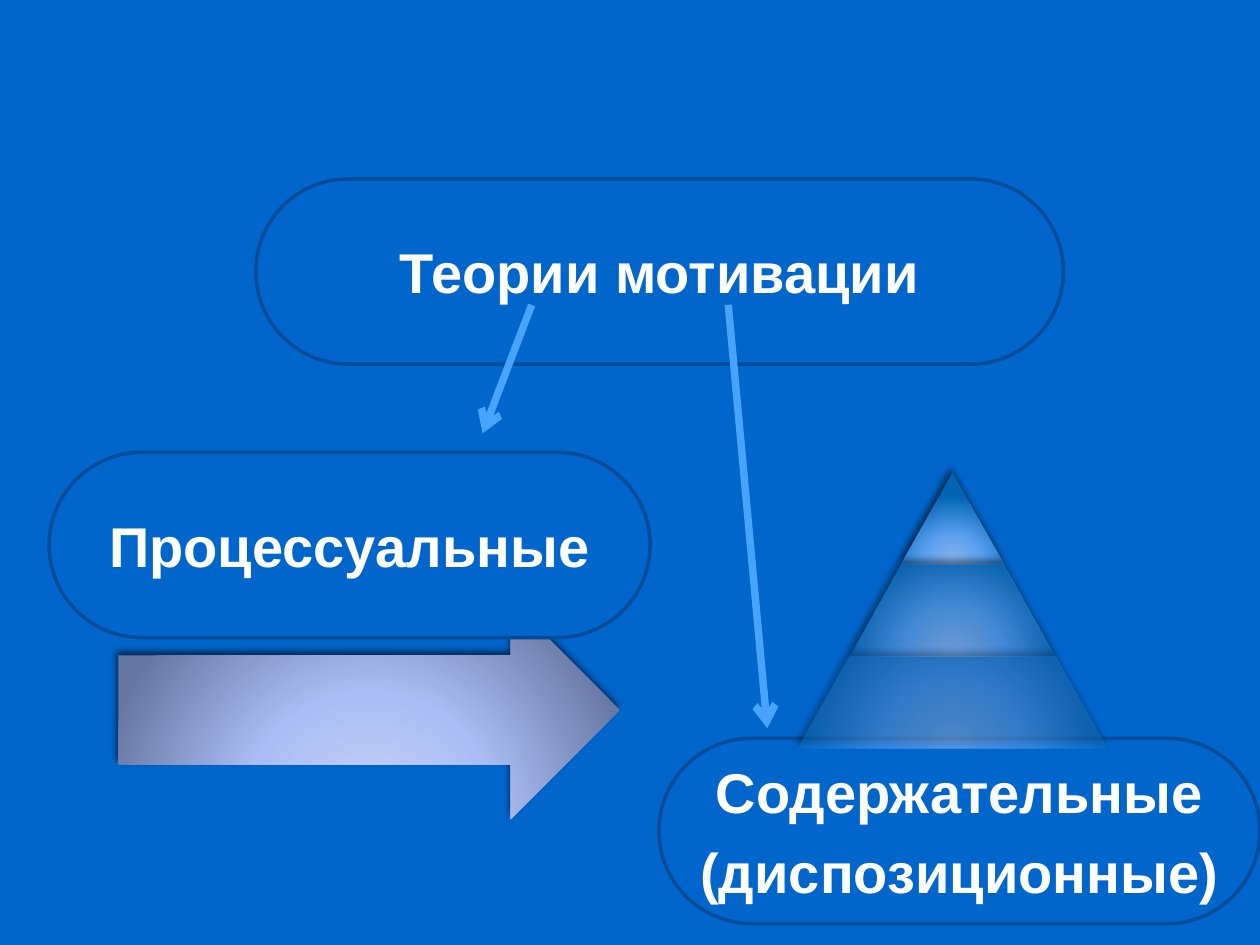
"""Build the slide on theories of motivation."""
from lxml import etree
from pptx import Presentation
from pptx.dml.color import RGBColor
from pptx.enum.shapes import MSO_CONNECTOR, MSO_SHAPE
from pptx.enum.text import MSO_ANCHOR, PP_ALIGN
from pptx.oxml import parse_xml
from pptx.oxml.ns import nsdecls, qn
from pptx.util import Inches, Pt

ROUND, ARROW, TRAP = MSO_SHAPE.ROUNDED_RECTANGLE, MSO_SHAPE.RIGHT_ARROW, MSO_SHAPE.TRAPEZOID
LINE = MSO_CONNECTOR.STRAIGHT
MIDDLE, CENTER = MSO_ANCHOR.MIDDLE, PP_ALIGN.CENTER

BLUE = RGBColor(0x00, 0x66, 0xCC)
NAVY = RGBColor(0x00, 0x4C, 0x99)
SKY = RGBColor(0x47, 0xA3, 0xFF)
WHITE = RGBColor(0xFF, 0xFF, 0xFF)
BLACK = RGBColor(0x00, 0x00, 0x00)
LILAC = [RGBColor(0xC9, 0xD3, 0xF7), RGBColor(0xAB, 0xBD, 0xF4), RGBColor(0x67, 0x76, 0xA3)]
AZURE = [RGBColor(0xA2, 0xC8, 0xFF), RGBColor(0x61, 0xAB, 0xFF), RGBColor(0x00, 0x6B, 0xBB)]
STOPS = [0, 46, 100]
FONT = {"name": "Arial", "size": Pt(32), "bold": True}
FRAME = {"word_wrap": True, "vertical_anchor": MIDDLE, "margin_left": 0,
         "margin_right": 0, "margin_top": 0, "margin_bottom": 0}


def add(kind, *place):
    shape = slide.shapes.add_shape(kind, *map(Inches, place))
    shape.shadow.inherit = False
    return shape


def shade(shape, tones, alpha):
    shape.line.fill.background()
    stops = "".join(
        f'<a:gs pos="{pos * 1000}"><a:srgbClr val="{tone}">'
        f'<a:alpha val="{alpha * 1000}"/></a:srgbClr></a:gs>'
        for pos, tone in zip(STOPS, tones))
    props = shape.element.spPr
    props.find(qn("a:prstGeom")).addnext(parse_xml(
        f'<a:gradFill {nsdecls("a")} rotWithShape="1"><a:gsLst>{stops}</a:gsLst>'
        '<a:path path="circle"><a:fillToRect l="50000" t="155000" r="50000" b="-55000"/>'
        '</a:path></a:gradFill>'))
    props.find(qn("a:effectLst")).append(parse_xml(
        f'<a:outerShdw {nsdecls("a")} blurRad="{Pt(4)}" dist="{Pt(3)}" dir="{245 * 60000}" '
        f'rotWithShape="0"><a:srgbClr val="{BLACK}"><a:alpha val="60000"/></a:srgbClr>'
        '</a:outerShdw>'))


deck = Presentation()
deck.slide_width, deck.slide_height = Inches(10), Inches(7.5)
slide = deck.slides.add_slide(deck.slide_layouts[6])
slide.background.fill.solid()
slide.background.fill.fore_color.rgb = BLUE

shade(add(ARROW, 0.94, 4.77, 3.98, 1.73), LILAC, 100)

for left, top, width, lines in [
    (2.03, 1.42, 6.41, ["Теории мотивации"]),
    (0.39, 3.59, 4.77, ["Процессуальные"]),
    (5.23, 5.86, 4.77, ["Содержательные", "(диспозиционные)"]),
]:
    box = add(ROUND, left, top, width, 1.47)
    box.adjustments[0] = 0.5
    box.fill.solid()
    box.fill.fore_color.rgb = BLUE
    box.line.color.rgb = NAVY
    box.line.width = Pt(2)
    frame = box.text_frame
    for key, value in FRAME.items():
        setattr(frame, key, value)
    for row, text in enumerate(lines):
        para = frame.add_paragraph() if row else frame.paragraphs[0]
        para.alignment = CENTER
        if row:
            para.space_before = Pt(7.5)
        run = para.add_run()
        run.text = text
        run.font.color.rgb = WHITE
        for key, value in FONT.items():
            setattr(run.font, key, value)

MID, PEAK, STEP, HALF = 7.56, 3.75, 0.73, 0.41
for tier, alpha in enumerate([90, 70, 50]):
    reach = HALF * (tier + 1)
    part = add(TRAP, MID - reach, PEAK + STEP * tier, reach * 2, STEP)
    part.adjustments[0] = HALF / STEP
    shade(part, AZURE, alpha)

for ends in [(4.22, 2.42, 3.83, 3.44), (5.78, 2.42, 6.09, 5.78)]:
    link = slide.shapes.add_connector(LINE, *map(Inches, ends))
    link.line.color.rgb = SKY
    link.line.width = Pt(4.25)
    etree.SubElement(link.line._get_or_add_ln(), qn("a:tailEnd"), type="arrow")
    etree.SubElement(link.element.spPr, qn("a:effectLst"))

deck.save("out.pptx")
